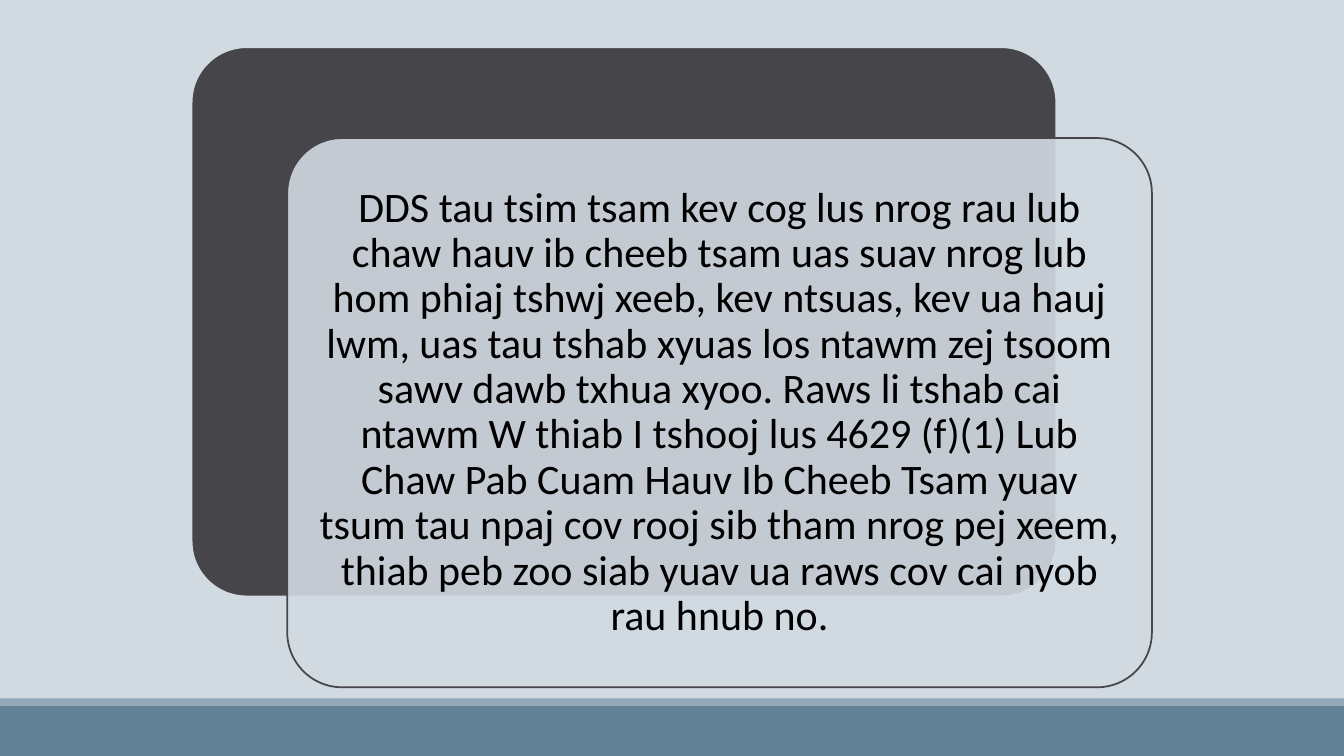
from lxml.etree import SubElement
from pptx import Presentation
from pptx.dml.color import RGBColor
from pptx.enum.shapes import MSO_SHAPE as Preset
from pptx.enum.text import MSO_ANCHOR as Anchor, PP_ALIGN as Align
from pptx.oxml.ns import qn
from pptx.util import Cm, Pt

MIST = RGBColor(0xD1, 0xD9, 0xE1)
CHARCOAL = RGBColor(0x46, 0x46, 0x4A)
STEEL = RGBColor(0x61, 0x81, 0x97)
LIGHT_STEEL = RGBColor(0x92, 0xA9, 0xB9)
BLACK = RGBColor(0, 0, 0)

WIDTH, HEIGHT = 33.87, 19.05
CARD_LEFT, CARD_TOP, CARD_WIDTH, CARD_HEIGHT = 4.83, 1.19, 21.79, 13.84
SHIFT_X, SHIFT_Y = 2.41, 2.29
TEXT_INSET = 0.41

STATEMENT = (
    "DDS tau tsim tsam kev cog lus nrog rau lub chaw hauv ib cheeb tsam uas "
    "suav nrog lub hom phiaj tshwj xeeb, kev ntsuas, kev ua hauj lwm, uas tau "
    "tshab xyuas los ntawm zej tsoom sawv dawb txhua xyoo. Raws li tshab cai "
    "ntawm W thiab I tshooj lus 4629 (f)(1) Lub Chaw Pab Cuam Hauv Ib Cheeb "
    "Tsam yuav tsum tau npaj cov rooj sib tham nrog pej xeem, thiab peb zoo "
    "siab yuav ua raws cov cai nyob rau hnub no."
)


def apply_format(target, values):
    for name, value in values.items():
        setattr(target, name, value)


class SlideBuilder:
    font_format = {"name": "Calibri", "size": Pt(30)}
    para_format = {"alignment": Align.CENTER, "line_spacing": 0.9}
    frame_format = {"word_wrap": True, "vertical_anchor": Anchor.MIDDLE}
    margins = ("margin_left", "margin_top", "margin_right", "margin_bottom")

    def __init__(self, page):
        self.page = page

    def background(self, color):
        fill = self.page.background.fill
        fill.solid()
        fill.fore_color.rgb = color

    def shape(self, preset, left, top, width, height, color):
        shape = self.page.shapes.add_shape(
            preset, Cm(left), Cm(top), Cm(width), Cm(height))
        shape.shadow.inherit = False
        shape.fill.solid()
        shape.fill.fore_color.rgb = color
        return shape

    def bar(self, top, height, color):
        bar = self.shape(Preset.RECTANGLE, 0, top, WIDTH, height, color)
        bar.line.fill.background()

    def card(self, left, top, color, outline, opacity=100):
        card = self.shape(Preset.ROUNDED_RECTANGLE, left, top,
                          CARD_WIDTH, CARD_HEIGHT, color)
        card.adjustments[0] = 0.1
        card.line.color.rgb = outline
        card.line.width = Pt(1.25)
        if opacity < 100:
            tint = card.fill._xPr.find(qn("a:solidFill"))[0]
            SubElement(tint, qn("a:alpha"), val=str(opacity * 1000))

    def text(self, left, top, width, height, words):
        box = self.page.shapes.add_textbox(
            Cm(left), Cm(top), Cm(width), Cm(height))
        frame = box.text_frame
        apply_format(frame, self.frame_format)
        apply_format(frame, dict.fromkeys(self.margins, Cm(0.3)))
        para = frame.paragraphs[0]
        apply_format(para, self.para_format)
        span = para.add_run()
        span.text = words
        apply_format(span.font, self.font_format)
        span.font.color.rgb = BLACK


def main():
    deck = Presentation()
    deck.slide_width, deck.slide_height = Cm(WIDTH), Cm(HEIGHT)
    builder = SlideBuilder(deck.slides.add_slide(deck.slide_layouts[6]))

    # Background and footer bars
    builder.background(MIST)
    builder.bar(17.78, 1.27, STEEL)
    builder.bar(17.6, 0.18, LIGHT_STEEL)

    # Dark card with the translucent card shifted over it
    front_left, front_top = CARD_LEFT + SHIFT_X, CARD_TOP + SHIFT_Y
    builder.card(CARD_LEFT, CARD_TOP, CHARCOAL, MIST)
    builder.card(front_left, front_top, MIST, CHARCOAL, opacity=90)

    # Statement inside the front card
    builder.text(front_left + TEXT_INSET, front_top + TEXT_INSET,
                 CARD_WIDTH - 2 * TEXT_INSET, CARD_HEIGHT - 2 * TEXT_INSET,
                 STATEMENT)

    deck.save("out.pptx")


if __name__ == "__main__":
    main()
